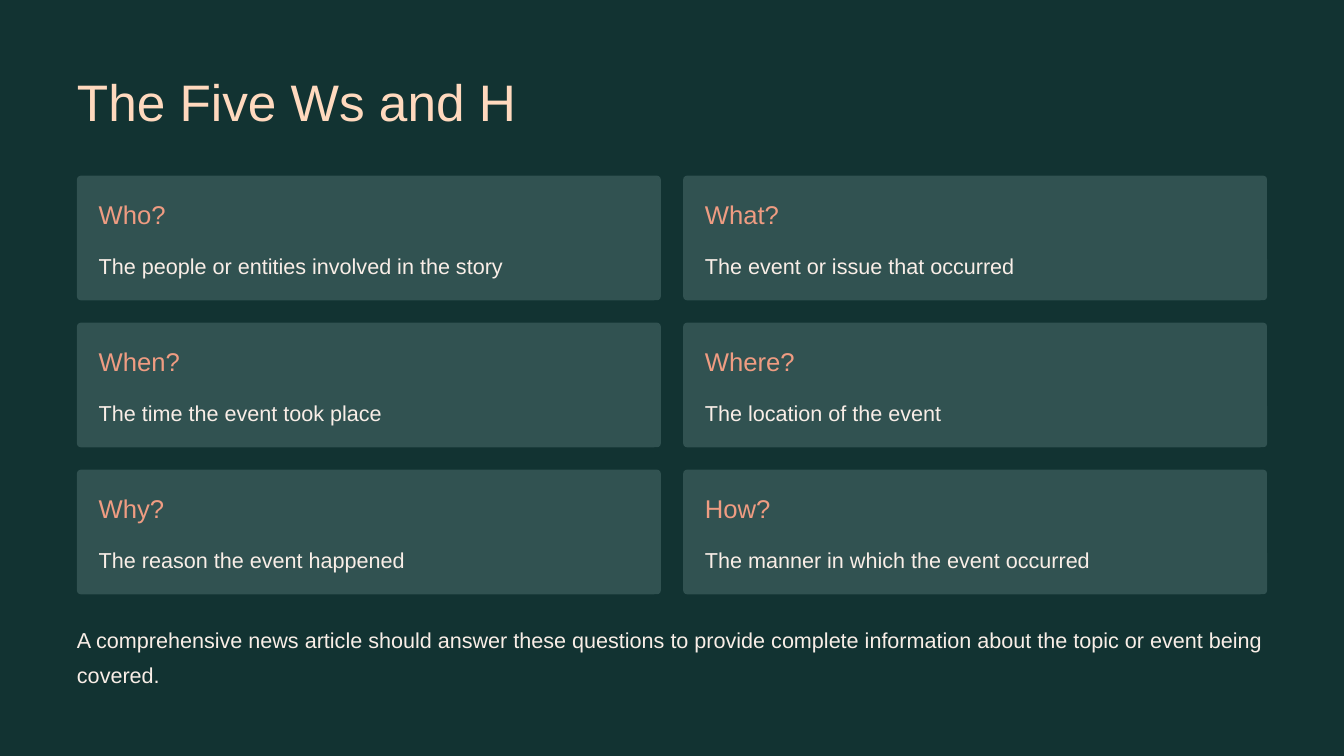
from pptx import Presentation
from pptx.dml.color import RGBColor
from pptx.enum.shapes import MSO_SHAPE
from pptx.enum.text import MSO_ANCHOR, MSO_AUTO_SIZE, PP_ALIGN
from pptx.util import Emu, Pt

EMU_PER_PX = 7620  # 120 px to the inch
BACKGROUND, CARD_FILL = "123332", "315251"
TITLE_STYLE = {"size": 44, "leading": 55, "color": "FFD9BE"}
QUESTION_STYLE = {"size": 22, "leading": 27.5, "color": "EF9C82"}
BODY_STYLE = {"size": 18.5, "leading": 30, "color": "F9EEE7"}
FRAME_FORMAT = {
    "margin_left": 0, "margin_top": 0, "margin_right": 0, "margin_bottom": 0,
    "word_wrap": True, "auto_size": MSO_AUTO_SIZE.NONE,
    "vertical_anchor": MSO_ANCHOR.TOP,
}

MARGIN, CARDS_TOP = 110, 251
CARD_WIDTH, CARD_HEIGHT = 834, 178
COLUMN_PITCH, ROW_PITCH = 866, 210
PADDING = 31
CARDS = [
    ("Who?", "The people or entities involved in the story"),
    ("What?", "The event or issue that occurred"),
    ("When?", "The time the event took place"),
    ("Where?", "The location of the event"),
    ("Why?", "The reason the event happened"),
    ("How?", "The manner in which the event occurred"),
]


def px(*lengths):
    return [Emu(length * EMU_PER_PX) for length in lengths]


def paint(fill, color):
    fill.solid()
    fill.fore_color.rgb = RGBColor.from_string(color)


def write(shape, text, style):
    frame = shape.text_frame
    for name, value in FRAME_FORMAT.items():
        setattr(frame, name, value)
    paragraph = frame.paragraphs[0]
    paragraph.alignment = PP_ALIGN.LEFT
    paragraph.space_before = Pt(0)
    paragraph.line_spacing = Pt(style["leading"])
    run = paragraph.add_run()
    run.text = text
    run.font.name = "Arial"
    run.font.size = Pt(style["size"])
    run.font.color.rgb = RGBColor.from_string(style["color"])


def add_title(slide, text, *box):
    title = slide.shapes.title
    title.left, title.top, title.width, title.height = px(*box)
    write(title, text, TITLE_STYLE)


def add_text(slide, text, style, *box):
    write(slide.shapes.add_textbox(*px(*box)), text, style)


def add_card(slide, question, answer, left, top):
    card = slide.shapes.add_shape(
        MSO_SHAPE.ROUNDED_RECTANGLE, *px(left, top, CARD_WIDTH, CARD_HEIGHT))
    card.adjustments[0] = 0.03
    card.shadow.inherit = False
    card.line.fill.background()
    paint(card.fill, CARD_FILL)
    text_left, text_width = left + PADDING, CARD_WIDTH - 2 * PADDING
    add_text(slide, question, QUESTION_STYLE,
             text_left, top + PADDING, text_width, 46)
    add_text(slide, answer, BODY_STYLE, text_left, top + 97, text_width, 50)


def main():
    presentation = Presentation()
    presentation.slide_width, presentation.slide_height = px(1920, 1080)
    slide = presentation.slides.add_slide(presentation.slide_layouts[5])
    paint(slide.background.fill, BACKGROUND)

    add_title(slide, "The Five Ws and H", MARGIN, 96, 739, 92)
    for index, (question, answer) in enumerate(CARDS):
        row, column = divmod(index, 2)
        add_card(slide, question, answer,
                 MARGIN + column * COLUMN_PITCH, CARDS_TOP + row * ROW_PITCH)
    add_text(slide,
             "A comprehensive news article should answer these questions to "
             "provide complete information about the topic or event being "
             "covered.",
             BODY_STYLE, MARGIN, 883, 1700, 101)

    presentation.save("out.pptx")


if __name__ == "__main__":
    main()
